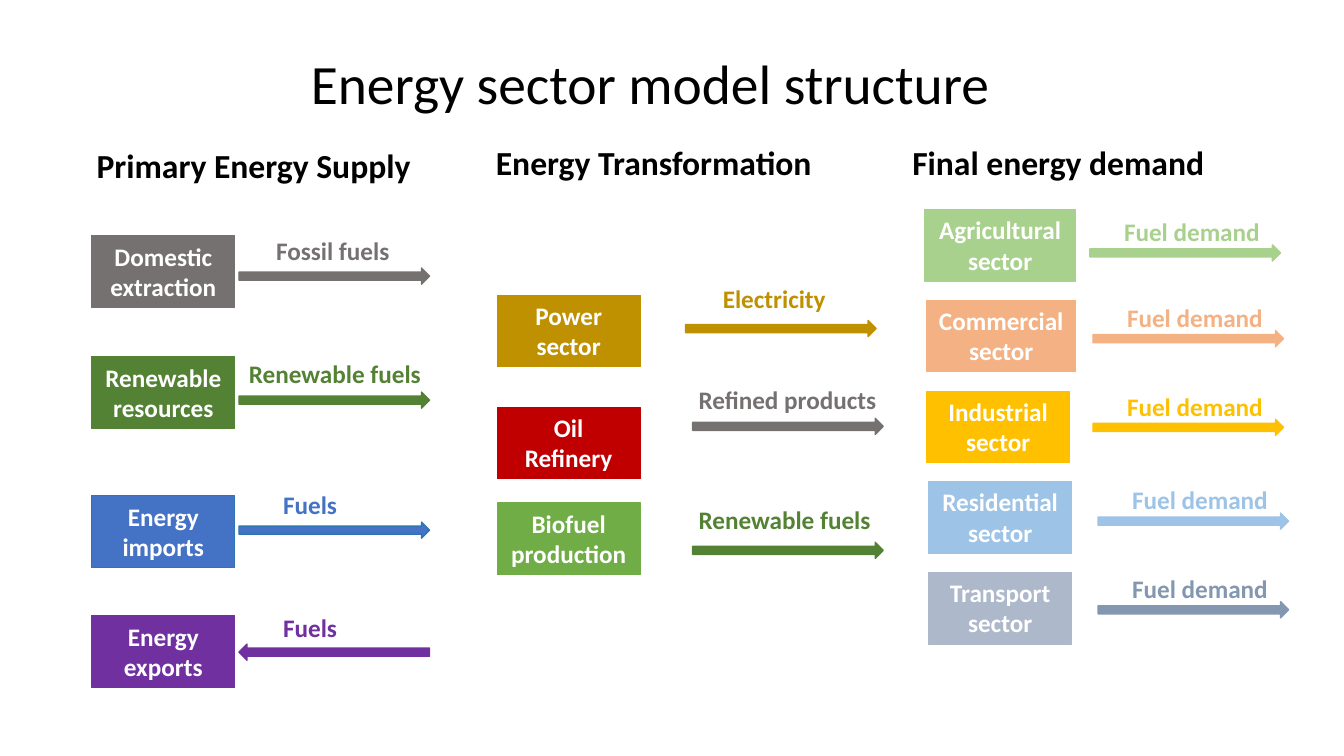
from pptx import Presentation
from pptx.dml.color import RGBColor
from pptx.enum.shapes import MSO_SHAPE
from pptx.enum.text import MSO_ANCHOR, MSO_AUTO_SIZE, PP_ALIGN
from pptx.util import Inches, Pt

RECT, ARROW = MSO_SHAPE.RECTANGLE, MSO_SHAPE.RIGHT_ARROW
LEFT, CENTER = PP_ALIGN.LEFT, PP_ALIGN.CENTER
TOP, MIDDLE = MSO_ANCHOR.TOP, MSO_ANCHOR.MIDDLE
GROW, FIXED = MSO_AUTO_SIZE.SHAPE_TO_FIT_TEXT, MSO_AUTO_SIZE.NONE

COLORS = {
    "black": "000000", "white": "FFFFFF", "gray": "767171",
    "green": "548235", "blue": "4472C4", "edge": "2E75B6",
    "purple": "7030A0", "gold": "BF9000", "red": "C00000",
    "leaf": "70AD47", "mint": "A9D18E", "peach": "F4B183",
    "yellow": "FFC000", "sky": "9DC3E6", "mist": "ADB9CA", "slate": "8497B0",
}
EDGES = {"blue": "edge"}  # outlines that differ from their fill


class Deck:
    font = "Calibri"
    wide, high = 1.42, 0.71
    reach, thick = 1.89, 0.16

    def __init__(self):
        self.prs = Presentation()
        self.prs.slide_width = Inches(13.33)
        self.prs.slide_height = Inches(7.5)
        self.slide = self.prs.slides.add_slide(self.prs.slide_layouts[5])

    def color(self, name):
        return RGBColor.from_string(COLORS[name])

    def words(self, shape, text, size, color, align=LEFT, bold=True,
              anchor=TOP, fit=GROW, space=None):
        frame = shape.text_frame
        frame.text = text
        look = {"word_wrap": True, "auto_size": fit, "vertical_anchor": anchor}
        for key, value in look.items():
            setattr(frame, key, value)
        style = {"name": self.font, "size": Pt(size), "bold": bold}
        for para in frame.paragraphs:
            para.alignment = align
            para.line_spacing = space
            for run in para.runs:
                for key, value in style.items():
                    setattr(run.font, key, value)
                run.font.color.rgb = self.color(color)

    def title(self, text):
        shape = self.slide.shapes.title
        place = {"left": 2.18, "top": 0.6, "width": 8.54, "height": 0.51}
        for key, value in place.items():
            setattr(shape, key, Inches(value))
        self.words(shape, text, 39.6, "black", CENTER, False, MIDDLE, FIXED, 0.9)

    def label(self, text, x, y, w, color, size=18, h=0.4):
        shape = self.slide.shapes.add_textbox(
            Inches(x), Inches(y), Inches(w), Inches(h))
        self.words(shape, text, size, color)

    def shape(self, kind, x, y, w, h, color, line):
        shape = self.slide.shapes.add_shape(
            kind, Inches(x), Inches(y), Inches(w), Inches(h))
        shape.shadow.inherit = False
        shape.fill.solid()
        shape.fill.fore_color.rgb = self.color(color)
        shape.line.color.rgb = self.color(EDGES.get(color, color))
        shape.line.width = Pt(line)
        return shape

    def box(self, text, x, y, color, w=wide):
        shape = self.shape(RECT, x, y, w, self.high, color, 0.75)
        self.words(shape, text, 18, "white", CENTER)

    def arrow(self, x, y, color, turn=0):
        shape = self.shape(ARROW, x, y, self.reach, self.thick, color, 1)
        shape.rotation = turn

    def save(self):
        self.prs.save("out.pptx")


# Column headings: text, left, top
HEADS = [
    ("Primary Energy Supply", 0.86, 1.39),
    ("Energy Transformation", 4.82, 1.36),
    ("Final energy demand", 8.95, 1.36),
]
# Supply: box, top, color, label, its left, top and width, arrow top, turn
SUPPLY = [
    ("Domestic extraction", 2.34, "gray", "Fossil fuels", 2.64, 2.29, 1.34, 2.66, 0),
    ("Renewable resources", 3.54, "green", "Renewable fuels", 2.37, 3.51, 1.94, 3.89, 0),
    ("Energy\nimports", 4.92, "blue", "Fuels", 2.71, 4.81, 1.37, 5.18, 0),
    ("Energy exports", 6.11, "purple", "Fuels", 2.71, 6.03, 1.37, 6.39, 180),
]
# Plants: box, top, color
PLANTS = [
    ("Power sector", 2.93, "gold"),
    ("Oil\nRefinery", 4.04, "red"),
    ("Biofuel production", 4.99, "leaf"),
]
# Products: label, left, top, width, color, arrow left and top
PRODUCTS = [
    ("Electricity", 7.07, 2.76, 1.41, "gold", 6.8, 3.18),
    ("Refined products", 6.83, 3.76, 2, "gray", 6.87, 4.15),
    ("Renewable fuels", 6.83, 4.95, 2.12, "green", 6.87, 5.38),
]
# Demand: box, left, width, color, label left and top, label color
DEMAND = [
    ("Agricultural sector", 9.17, 1.5, "mint", 11.05, 2.1, "mint"),
    ("Commercial sector", 9.19, 1.48, "peach", 11.08, 2.95, "peach"),
    ("Industrial sector", 9.19, 1.42, "yellow", 11.08, 3.83, "yellow"),
    ("Residential sector", 9.21, 1.42, "sky", 11.13, 4.76, "sky"),
    ("Transport sector", 9.21, 1.42, "mist", 11.13, 5.64, "slate"),
]


def main():
    deck = Deck()

    # Title and headings
    deck.title("Energy sector model structure")
    for text, x, y in HEADS:
        deck.label(text, x, y, 3.87, "black", 24, 0.5)

    # Primary supply
    for name, top, color, fuel, x, y, w, tip, turn in SUPPLY:
        deck.box(name, 0.91, top, color)
        deck.label(fuel, x, y, w, color)
        deck.arrow(2.37, tip, color, turn)

    # Transformation
    for name, top, color in PLANTS:
        deck.box(name, 4.93, top, color)
    for fuel, x, y, w, color, start, tip in PRODUCTS:
        deck.label(fuel, x, y, w, color)
        deck.arrow(start, tip, color)

    # Final demand
    for row, (name, left, wide, color, x, y, tint) in enumerate(DEMAND):
        deck.box(name, left, 2.08 + 0.9 * row, color, wide)
        deck.label("Fuel demand", x, y, 1.6, tint)
        deck.arrow(x - 0.24, y + 0.33, tint)

    deck.save()


if __name__ == "__main__":
    main()
